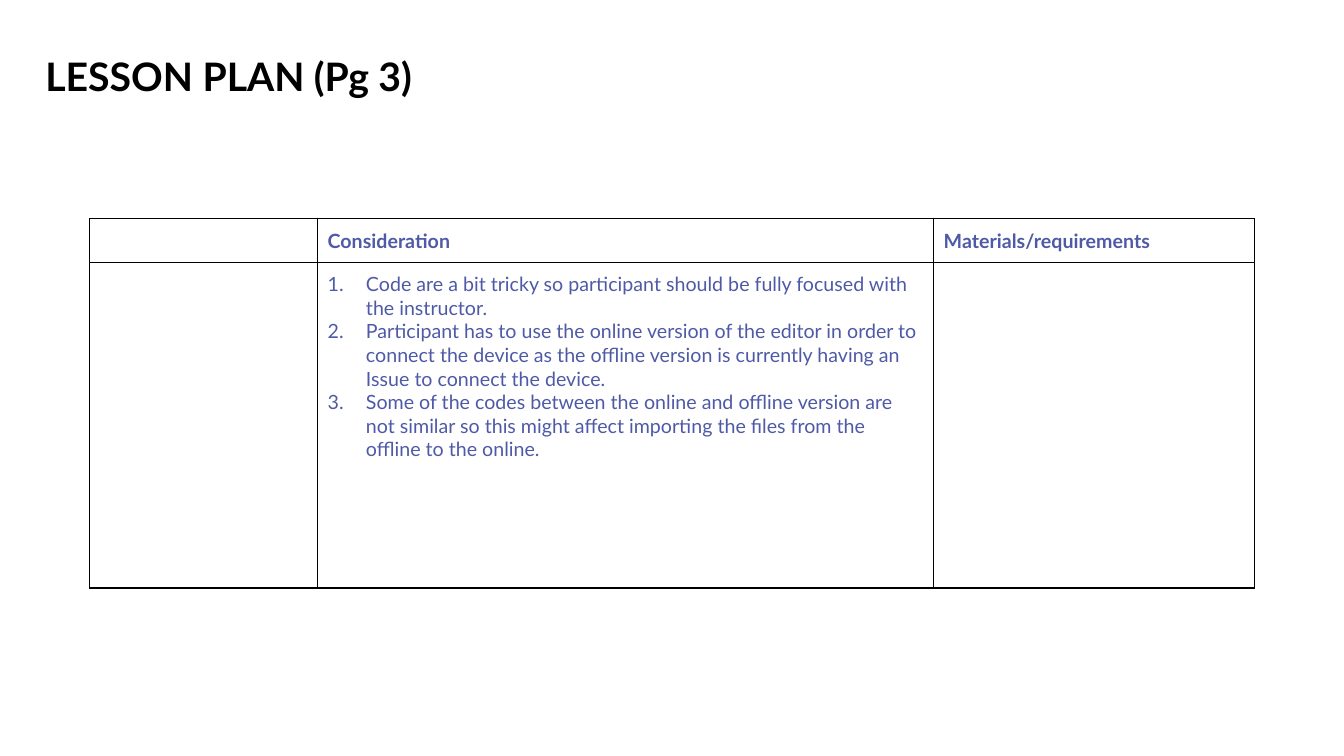
from dataclasses import dataclass

from lxml.etree import SubElement
from pptx import Presentation
from pptx.dml.color import RGBColor
from pptx.enum.text import MSO_ANCHOR, PP_ALIGN
from pptx.oxml.ns import qn
from pptx.util import Inches, Pt


@dataclass(frozen=True)
class Theme:
    font: str = "Lato"
    title_color: str = "000000"
    text_color: str = "4F5AA7"
    border_color: str = "000000"
    title_size: int = 28
    text_size: int = 14
    border_width: float = 1


THEME = Theme()
TITLE_ONLY_LAYOUT = 5

COLUMN_WIDTHS = (2.26, 6.11, 3.18)
ROW_HEIGHTS = (0.43, 3.23)
HEADINGS = ("", "Consideration", "Materials/requirements")
CONSIDERATIONS = (
    "Code are a bit tricky so participant should be fully focused with "
    "the instructor.",
    "Participant has to use the online version of the editor in order to "
    "connect the device as the offline version is currently having an "
    "Issue to connect the device.",
    "Some of the codes between the online and offline version are not "
    "similar so this might affect importing the files from the offline "
    "to the online.",
)


def apply_format(target, values):
    for attribute, value in values.items():
        setattr(target, attribute, value)


def format_font(paragraph, size, color, bold):
    apply_format(paragraph.font, {"name": THEME.font, "size": Pt(size), "bold": bold})
    paragraph.font.color.rgb = RGBColor.from_string(color)


def add_title(slide, text):
    title = slide.shapes.title
    apply_format(title, {
        "left": Inches(0.27), "top": Inches(0.47),
        "width": Inches(8.83), "height": Inches(0.57),
    })
    frame = title.text_frame
    apply_format(frame, {
        "text": text, "word_wrap": True, "vertical_anchor": MSO_ANCHOR.MIDDLE,
        "margin_left": Inches(0.18), "margin_top": 0, "margin_bottom": 0,
    })
    heading = frame.paragraphs[0]
    heading.alignment = PP_ALIGN.LEFT
    format_font(heading, THEME.title_size, THEME.title_color, True)


def outline_cell(cell):
    properties = cell._tc.get_or_add_tcPr()
    for side in ("a:lnL", "a:lnR", "a:lnT", "a:lnB"):
        border = SubElement(properties, qn(side), w=str(Pt(THEME.border_width)))
        fill = SubElement(border, qn("a:solidFill"))
        SubElement(fill, qn("a:srgbClr"), val=THEME.border_color)


def number_paragraph(paragraph):
    properties = paragraph._p.get_or_add_pPr()
    indent = Inches(0.38)
    properties.set("marL", str(indent))
    properties.set("indent", str(-indent))
    SubElement(properties, qn("a:buFont"), typeface="+mj-lt")
    SubElement(properties, qn("a:buAutoNum"), type="arabicPeriod")


def fill_cell(cell, lines, bold=False, numbered=False):
    margins = ("margin_left", "margin_right", "margin_top", "margin_bottom")
    apply_format(cell, dict.fromkeys(margins, Inches(0.1)))
    cell.text = "\n".join(lines)
    for paragraph in cell.text_frame.paragraphs:
        if numbered:
            number_paragraph(paragraph)
        format_font(paragraph, THEME.text_size, THEME.text_color, bold)


def add_plan_table(slide):
    plan = slide.shapes.add_table(
        len(ROW_HEIGHTS), len(COLUMN_WIDTHS), Inches(0.89), Inches(2.17),
        Inches(sum(COLUMN_WIDTHS)), Inches(sum(ROW_HEIGHTS)),
    ).table
    apply_format(plan, {"first_row": False, "horz_banding": False})
    for column, width in zip(plan.columns, COLUMN_WIDTHS):
        column.width = Inches(width)
    for row, height in zip(plan.rows, ROW_HEIGHTS):
        row.height = Inches(height)
    for cell in plan.iter_cells():
        outline_cell(cell)
        cell.fill.background()
    for column, heading in enumerate(HEADINGS):
        if heading:
            fill_cell(plan.cell(0, column), [heading], bold=True)
    considerations = plan.cell(1, HEADINGS.index("Consideration"))
    fill_cell(considerations, CONSIDERATIONS, numbered=True)


def main():
    presentation = Presentation()
    apply_format(presentation, {
        "slide_width": Inches(13.33), "slide_height": Inches(7.5),
    })
    layout = presentation.slide_layouts[TITLE_ONLY_LAYOUT]
    slide = presentation.slides.add_slide(layout)
    add_title(slide, "LESSON PLAN (Pg 3)")
    add_plan_table(slide)
    presentation.save("out.pptx")


if __name__ == "__main__":
    main()
